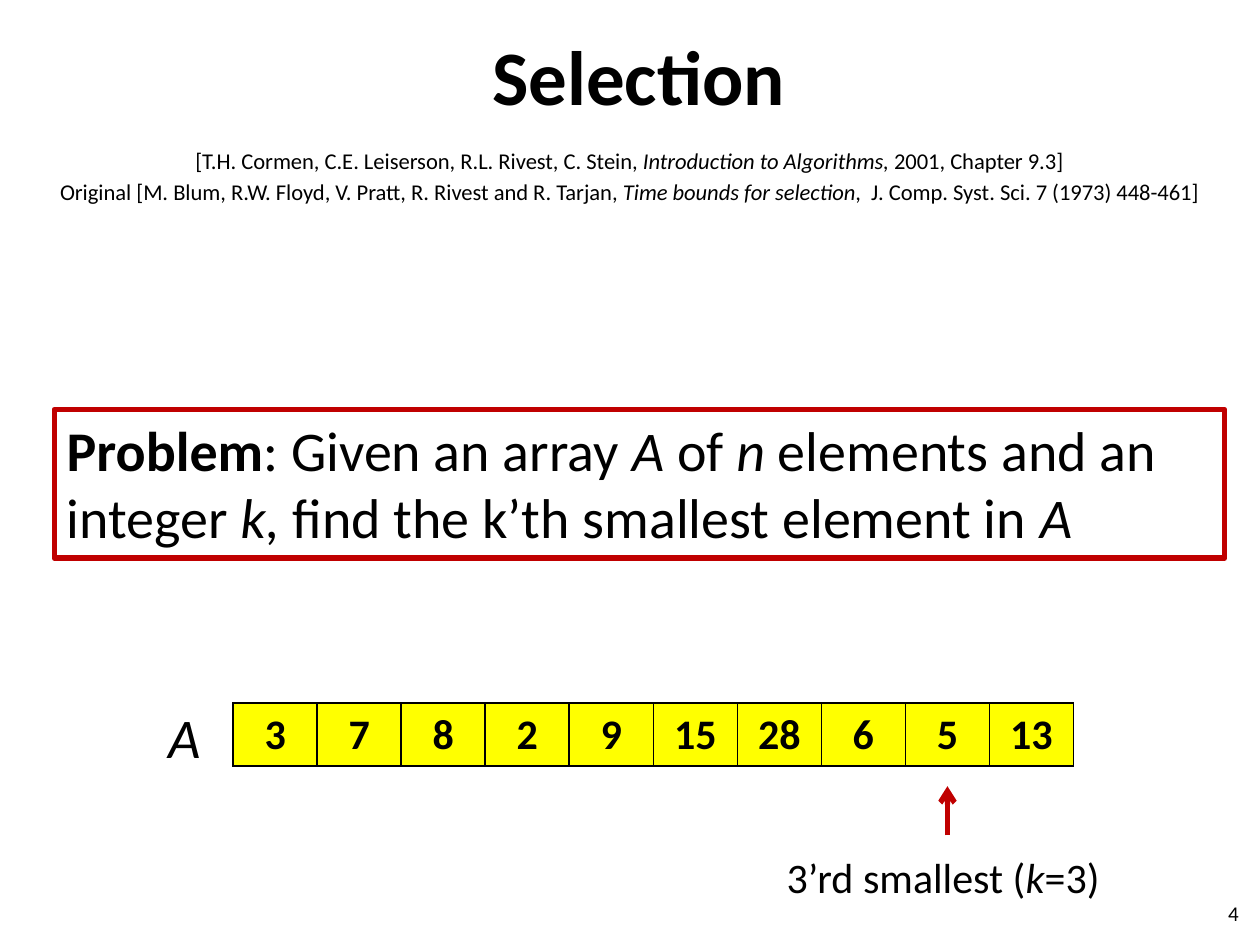
from dataclasses import dataclass

from lxml import etree
from pptx import Presentation
from pptx.dml.color import RGBColor
from pptx.enum.shapes import MSO_CONNECTOR
from pptx.enum.text import MSO_ANCHOR, PP_ALIGN
from pptx.oxml.ns import qn
from pptx.util import Emu, Inches, Pt

LEFT, MID, RIGHT = PP_ALIGN.LEFT, PP_ALIGN.CENTER, PP_ALIGN.RIGHT
TOP, CENTER = MSO_ANCHOR.TOP, MSO_ANCHOR.MIDDLE
STRAIGHT = MSO_CONNECTOR.STRAIGHT
COLS, ROWS = 100, 75


@dataclass(frozen=True)
class Theme:
    font: str = "Calibri"
    ink: str = "000000"
    accent: str = "C00000"
    cell: str = "FFFF00"
    title: float = 44
    lead: float = 32
    body: float = 24
    cite: float = 12.9
    small: float = 12
    thick: float = 3
    thin: float = 1


def color(code):
    return RGBColor.from_string(code)


class Deck:
    def __init__(self, theme):
        self.theme = theme
        self.deck = Presentation()
        self.deck.slide_width, self.deck.slide_height = Inches(10), Inches(7.5)
        self.slide = self.deck.slides.add_slide(self.deck.slide_layouts[6])

    def grid(self, *spots):
        """Turn alternating column and row counts into lengths."""
        units = self.deck.slide_width / COLS, self.deck.slide_height / ROWS
        return [Emu(round(n * units[i % 2])) for i, n in enumerate(spots)]

    def fill(self, para, text, size, align, bold=False):
        """Fill a paragraph; text between underscores is italic, between stars bold."""
        para.alignment = align
        font = para.font
        font.name, font.size, font.bold = self.theme.font, Pt(size), bold
        font.color.rgb = color(self.theme.ink)
        for i, part in enumerate(text.split("_")):
            for j, piece in enumerate(part.split("*")):
                if piece:
                    run = para.add_run()
                    run.text = piece
                    if i % 2:
                        run.font.italic = True
                    if j % 2:
                        run.font.bold = True

    def text(self, spot, lines, size, align=MID, anchor=TOP, bold=False, gap=0):
        box = self.slide.shapes.add_textbox(*self.grid(*spot))
        frame = box.text_frame
        frame.word_wrap = True
        frame.vertical_anchor = anchor
        for i, line in enumerate(lines):
            para = frame.add_paragraph() if i else frame.paragraphs[0]
            para.space_before = Pt(gap)
            self.fill(para, line, size, align, bold)
        return box

    def frame(self, spot, lines, size):
        box = self.text(spot, lines, size, LEFT)
        box.line.color.rgb = color(self.theme.accent)
        box.line.width = Pt(self.theme.thick)

    def table(self, spot, values):
        table = self.slide.shapes.add_table(1, len(values), *self.grid(*spot)).table
        for cell, value in zip(table.rows[0].cells, values):
            cell.fill.solid()
            cell.fill.fore_color.rgb = color(self.theme.cell)
            self.fill(cell.text_frame.paragraphs[0], str(value),
                      self.theme.body, MID, True)
            self.edge(cell)

    def edge(self, cell):
        """Draw a thin line on all four sides of a cell."""
        props = cell._tc.get_or_add_tcPr()
        for i, side in enumerate("LRTB"):
            line = etree.Element(qn(f"a:ln{side}"), w=str(Pt(self.theme.thin)))
            fill = etree.SubElement(line, qn("a:solidFill"))
            etree.SubElement(fill, qn("a:srgbClr"), val=self.theme.ink)
            props.insert(i, line)

    def arrow(self, *ends):
        link = self.slide.shapes.add_connector(STRAIGHT, *self.grid(*ends))
        link.line.color.rgb = color(self.theme.accent)
        link.line.width = Pt(self.theme.thick)
        etree.SubElement(link.line._get_or_add_ln(), qn("a:tailEnd"), type="arrow")
        etree.SubElement(link._element.spPr, qn("a:effectLst"))


def main():
    theme = Theme()
    page = Deck(theme)
    page.text((5.7, -0.3, 90, 12.5), ["Selection"], theme.title,
              anchor=CENTER, bold=True)
    page.text((2.3, 11.2, 95.3, 7.4), [
        "[T.H. Cormen, C.E. Leiserson, R.L. Rivest, C. Stein, "
        "_Introduction to Algorithms,_ 2001, Chapter 9.3]",
        "Original [M. Blum, R.W. Floyd, V. Pratt, R. Rivest and R. Tarjan, "
        "_Time bounds for selection_,  J. Comp. Syst. Sci. 7 (1973) 448-461]",
    ], theme.cite, gap=2)
    page.frame((4.3, 32.5, 92.9, 11.8), [
        "*Problem*: Given an array _A _of _n_ elements and an integer _k, _"
        "find the k’th smallest element in _A_"], theme.lead)

    values = [3, 7, 8, 2, 9, 15, 28, 6, 5, 13]
    left, top, wide, high = 18.5, 55.8, 66.7, 5
    page.table((left, top, wide, high), values)
    page.text((9.8, 55.3, 7.1, 6.4), ["_A_"], theme.lead, RIGHT)

    rank = 3
    place = values.index(sorted(values)[rank - 1])
    mark = left + (place + 0.5) * wide / len(values)
    page.arrow(mark, 66.3, mark, 62.4)
    page.text((57.9, 67.1, 33.9, 5), [f"{rank}’rd smallest (_k_={rank})"], theme.body)
    page.text((76, 70.5, 23.3, 4), ["4"], theme.small, RIGHT, CENTER)
    page.deck.save("out.pptx")


if __name__ == "__main__":
    main()
